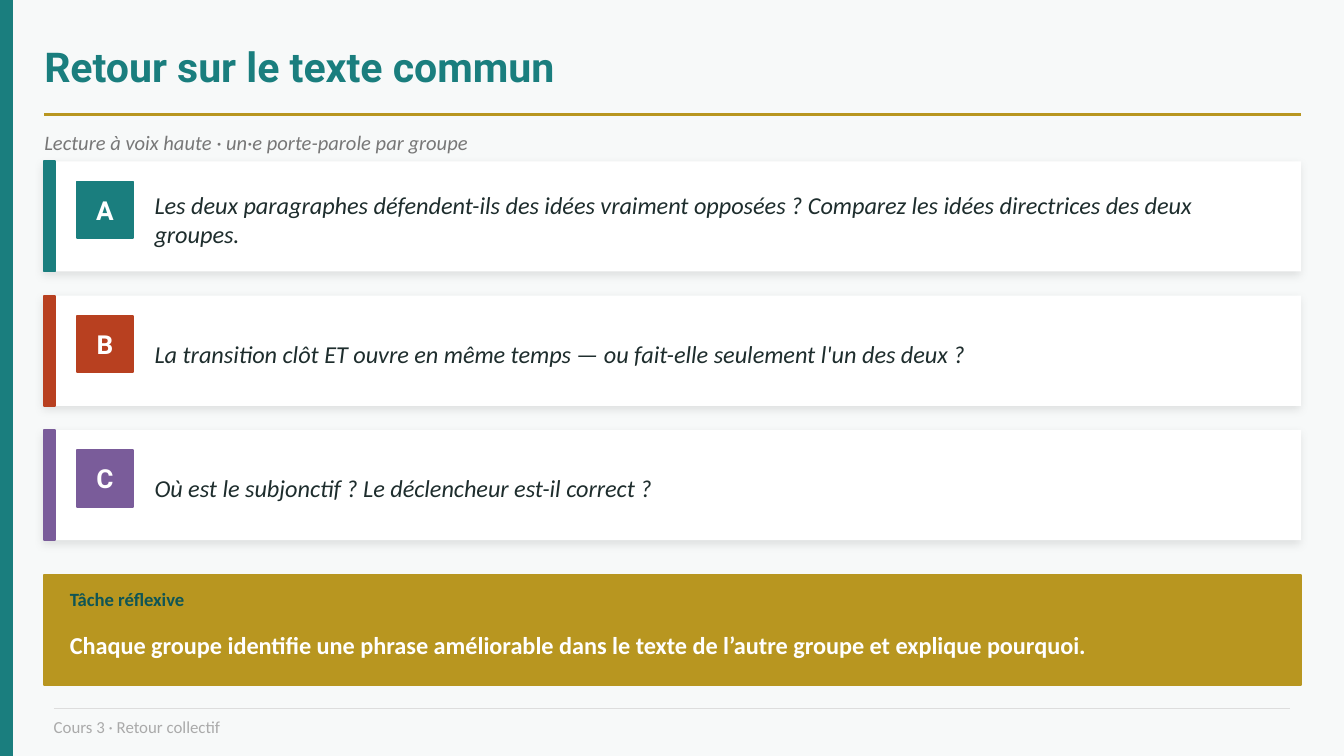
from lxml.etree import SubElement
from pptx import Presentation
from pptx.dml.color import RGBColor
from pptx.enum.shapes import MSO_CONNECTOR, MSO_SHAPE
from pptx.enum.text import MSO_ANCHOR, PP_ALIGN
from pptx.oxml.ns import qn
from pptx.util import Inches, Pt

# Content
TITLE = "Retour sur le texte commun"
SUBTITLE = "Lecture à voix haute · un·e porte-parole par groupe"
QUESTIONS = [
    ("A", "teal", "Les deux paragraphes défendent-ils des idées vraiment opposées ? "
                  "Comparez les idées directrices des deux groupes."),
    ("B", "rust", "La transition clôt ET ouvre en même temps — "
                  "ou fait-elle seulement l'un des deux ?"),
    ("C", "violet", "Où est le subjonctif ? Le déclencheur est-il correct ?"),
]
TASK_LABEL = "Tâche réflexive"
TASK = ("Chaque groupe identifie une phrase améliorable dans le texte "
        "de l’autre groupe et explique pourquoi.")
FOOTER = "Cours 3 · Retour collectif"

THEME = {
    "colors": {
        "back": "F7F9F9", "teal": "1A7E7E", "rust": "B84020", "violet": "7A5C9A",
        "gold": "B89620", "white": "FFFFFF", "ink": "1E2D2D", "grey": "777777",
        "deep": "0F5555", "rule": "DDDDDD", "pale": "AAAAAA", "shadow": "000000",
    },
    "sizes": {"title": 22, "badge": 14, "body": 13, "sub": 11, "label": 10, "footer": 9},
    "head": "Roboto",
    "text": "Calibri",
}

# Layout, in inches, on a 16:9 slide
W = 10
H = W * 9 / 16
LEFT, WIDTH = 0.33, 9.35
CARD_TOP, CARD_H, CARD_STEP = 1.2, 0.82, 1
BADGE = 0.42
TASK_TOP, TASK_LEFT = 4.28, 0.52


def color(name):
    return RGBColor.from_string(THEME["colors"][name])


def write(sp, text, size, tint, font="text", bold=False, italic=False,
          align=PP_ALIGN.LEFT):
    tf = sp.text_frame
    tf.word_wrap = True
    tf.vertical_anchor = MSO_ANCHOR.MIDDLE
    tf.margin_left = tf.margin_right = tf.margin_top = tf.margin_bottom = 0
    p = tf.paragraphs[0]
    p.text = text
    p.alignment = align
    p.font.name = THEME[font]
    p.font.size = Pt(THEME["sizes"][size])
    p.font.bold = bold
    p.font.italic = italic
    p.font.color.rgb = color(tint)


def add_text(s, box, text, size, tint, **style):
    write(s.shapes.add_textbox(*map(Inches, box)), text, size, tint, **style)


def add_rect(s, box, fill, outlined=True):
    sp = s.shapes.add_shape(MSO_SHAPE.RECTANGLE, *map(Inches, box))
    sp.shadow.inherit = False
    sp.fill.solid()
    sp.fill.fore_color.rgb = color(fill)
    if outlined:
        sp.line.color.rgb = color(fill)
        sp.line.width = Pt(1)
    else:
        sp.line.fill.background()
    return sp


def add_soft_shadow(sp):
    effects = sp._element.spPr.find(qn("a:effectLst"))
    shadow = SubElement(effects, qn("a:outerShdw"), blurRad=str(Pt(5)),
                        dist=str(Pt(2)), dir=str(135 * 60000),
                        algn="bl", rotWithShape="0")
    tint = SubElement(shadow, qn("a:srgbClr"), val=THEME["colors"]["shadow"])
    SubElement(tint, qn("a:alpha"), val="9000")


def add_rule(s, x, y, width, tint, weight):
    line = s.shapes.add_connector(MSO_CONNECTOR.STRAIGHT, Inches(x), Inches(y),
                                  Inches(x + width), Inches(y))
    line.line.color.rgb = color(tint)
    line.line.width = Pt(weight)
    SubElement(line._element.spPr, qn("a:effectLst"))


def add_question(s, top, letter, tint, text):
    card = add_rect(s, (LEFT, top, WIDTH, CARD_H), "white", outlined=False)
    add_soft_shadow(card)
    add_rect(s, (LEFT, top, 0.08, CARD_H), tint)
    badge = add_rect(s, (0.57, top + 0.15, BADGE, BADGE), tint)
    write(badge, letter, "badge", "white", font="head", bold=True,
          align=PP_ALIGN.CENTER)
    add_text(s, (1.15, top + 0.22, 8.3, 0.42), text, "body", "ink", italic=True)


def main():
    prs = Presentation()
    prs.slide_width, prs.slide_height = Inches(W), Inches(H)
    s = prs.slides.add_slide(prs.slide_layouts[6])
    s.background.fill.solid()
    s.background.fill.fore_color.rgb = color("back")

    # Side band and heading
    add_rect(s, (0, 0, 0.09, H), "teal")
    add_text(s, (LEFT, 0.22, WIDTH, 0.55), TITLE, "title", "teal",
             font="head", bold=True)
    add_rule(s, LEFT, 0.85, WIDTH, "gold", 1.5)
    add_text(s, (LEFT, 0.9, WIDTH, 0.32), SUBTITLE, "sub", "grey", italic=True)

    # Question cards
    for i, question in enumerate(QUESTIONS):
        add_question(s, CARD_TOP + i * CARD_STEP, *question)

    # Task panel
    add_rect(s, (LEFT, TASK_TOP, WIDTH, CARD_H), "gold")
    add_text(s, (TASK_LEFT, TASK_TOP + 0.05, 3, 0.25), TASK_LABEL, "label", "deep",
             bold=True)
    add_text(s, (TASK_LEFT, TASK_TOP + 0.3, 9, 0.44), TASK, "body", "white", bold=True)

    # Footer
    add_rule(s, 0.4, 5.27, 9.2, "rule", 0.75)
    add_text(s, (0.4, 5.3, 9.2, 0.22), FOOTER, "footer", "pale")

    prs.save("out.pptx")


if __name__ == "__main__":
    main()
